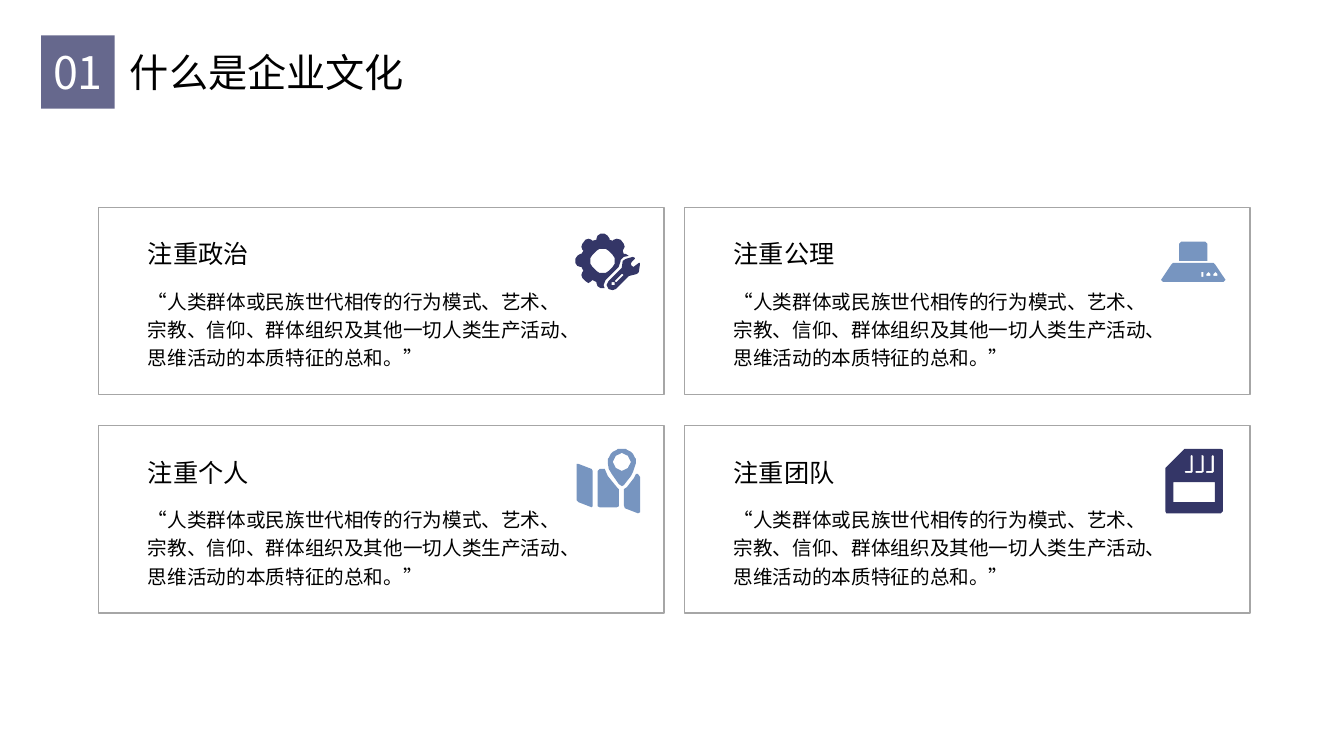
import math

from pptx import Presentation, util as u
from pptx.dml.color import RGBColor
from pptx.enum import shapes, text
from pptx.oxml.ns import qn
from lxml import etree

Cm = u.Cm
FONT = "Noto Sans CJK SC"
COLORS = {"navy": "343667", "blue": "7795C0", "border": "A6A6A6",
          "black": "000000", "white": "FFFFFF"}
QUOTE = ("“人类群体或民族世代相传的行为模式、艺术、宗教、信仰、群体组织"
         "及其他一切人类生产活动、思维活动的本质特征的总和。”")
ICON_UNIT = Cm(0.0254)


def color(name):
    return RGBColor.from_string(COLORS[name])


def arc(cx, cy, radius, start=0, end=360):
    """Points along an arc, in degrees clockwise from the right."""
    steps = 24
    angles = [math.radians(start + (end - start) * i / steps) for i in range(steps + 1)]
    return [(cx + radius * math.cos(a), cy + radius * math.sin(a)) for a in angles]


def rect(left, top, right, bottom):
    return [(left, top), (right, top), (right, bottom), (left, bottom)]


def shift(points, dx):
    return [(x + dx, y) for x, y in points]


GEAR = [
    [(25, 0), (29, 0), (32, 1.5), (34, 5), (34, 6), (37, 7), (38, 6), (41, 5),
     (45, 6), (48, 10), (49, 13), (47, 17), (48, 20), (50, 20), (53, 22), (48, 23),
     (45, 26), (45, 27), (43, 33), (30, 46), (28, 51), (29, 54), (25, 54),
     (22, 52.5), (21, 49), (21, 48), (17, 46), (16, 47), (13, 49), (10, 47),
     (7, 44), (5.5, 41), (7, 38), (8, 37), (6, 33), (5, 33), (1.5, 32), (0, 29),
     (0, 25), (1.5, 21.5), (5, 20), (6, 20), (8, 17), (7, 16), (5.5, 13), (7, 10),
     (10, 6), (13, 5), (16, 6), (17, 7), (21, 6), (21, 5), (22, 1.5)],
    arc(27, 27, 12),
    [(57, 23), (59, 24), (59, 25), (56, 28), (55, 30), (56, 32), (58, 33), (59, 32),
     (63, 29), (64, 29), (64, 31), (63, 38), (61, 40), (53, 42), (40, 55), (37, 56),
     (33, 55), (31, 51), (33, 47), (46, 34), (47, 27), (50, 25)],
    arc(37.5, 49.5, 1.5),
    [(46, 40), (39, 47), (40, 48), (41, 48), (48, 41), (47, 40)],
]
MAP = [
    [(59, 25), (61, 25), (63, 28), (63, 63), (61, 64), (48, 59), (47, 56), (47, 40),
     (50, 38), (57, 29)],
    [(23, 20), (28, 20), (31, 27), (40, 38), (42, 40), (42, 57), (40, 58), (23, 58),
     (21, 57), (21, 22)],
    [(0, 15), (2, 15), (15, 20), (16, 22), (16, 57), (15, 58), (2, 53), (0, 51)],
    arc(45, 14, 14, 180, 360) + [(56, 23), (54, 27), (47, 36), (45, 37), (42, 35),
                                 (35, 25), (32, 20)],
    arc(45, 13, 8.5),
]
HOOD = [
    [(20, 0), (44, 0), (46, 2), (46, 19), (18, 19), (18, 2)],
    [(12, 21), (52, 21), (54, 23), (64, 38), (62, 40), (2, 40), (0, 38), (10, 23)],
    arc(54, 32.5, 2), arc(47, 32.5, 2), rect(40, 30, 42, 35),
]
HOOK = [(20, 22), (25, 22), (25, 7), (26, 6), (27, 7), (27, 23), (26, 24), (20, 24), (19, 23)]
MEMORY_CARD = [
    [(19, 0), (55, 0), (57, 1), (57, 62), (55, 64), (1, 64), (0, 62), (0, 19), (1, 18)],
    *[shift(HOOK, 10.5 * i) for i in range(3)],
    rect(8, 33, 49, 53),
]

# Heading, icon outlines, icon colour, icon offset from the card's corner
CARDS = [
    ("注重政治", GEAR, "navy", (12.01, 0.66)),
    ("注重公理", HOOD, "blue", (12.01, 0.86)),
    ("注重个人", MAP, "blue", (12.04, 0.58)),
    ("注重团队", MEMORY_CARD, "navy", (12.12, 0.58)),
]


def write(shape, content, size, font_color="black", align=text.PP_ALIGN.LEFT,
          anchor=text.MSO_ANCHOR.TOP, spacing=1.0):
    tf = shape.text_frame
    tf.word_wrap = True
    tf.vertical_anchor = anchor
    p = tf.paragraphs[0]
    p.alignment = align
    p.line_spacing = spacing
    r = p.add_run()
    r.text = content
    r.font.size = u.Pt(size)
    r.font.name = FONT
    r.font.color.rgb = color(font_color)
    rPr = r.font._element
    rPr.set("lang", "zh-CN")
    ea = etree.Element(qn("a:ea"), typeface=FONT)
    rPr.find(qn("a:latin")).addnext(ea)


def add_text(s, box, content, size, spacing=1.0):
    tb = s.shapes.add_textbox(*map(Cm, box))
    write(tb, content, size, spacing=spacing)


def add_icon(s, left, top, outlines, fill):
    first, *others = outlines
    builder = s.shapes.build_freeform(*first[0], scale=ICON_UNIT)
    builder.add_line_segments(first[1:])
    for outline in others:
        builder.move_to(*outline[0])
        builder.add_line_segments(outline[1:])
    icon = builder.convert_to_shape(Cm(left), Cm(top))
    icon.shadow.inherit = False
    icon.fill.solid()
    icon.fill.fore_color.rgb = color(fill)
    icon.line.fill.background()


def add_header(s, left, top, side, number, title):
    sp = s.shapes.title
    sp.left, sp.top = Cm(left + side + 0.13), Cm(top + 0.2)
    sp.width, sp.height = Cm(8.2), Cm(1.45)
    write(sp, title, 28)
    sp.text_frame.auto_size = text.MSO_AUTO_SIZE.NONE

    badge = s.shapes.add_shape(shapes.MSO_SHAPE.RECTANGLE, *map(Cm, (left, top, side, side)))
    badge.shadow.inherit = False
    badge.fill.solid()
    badge.fill.fore_color.rgb = color("navy")
    badge.line.fill.background()
    srgb = badge._element.spPr.find(qn("a:solidFill"))[0]
    etree.SubElement(srgb, qn("a:alpha"), val="75000")
    write(badge, number, 32, "white", text.PP_ALIGN.CENTER, text.MSO_ANCHOR.MIDDLE)
    badge.text_frame.word_wrap = False


def add_card(s, left, top, width, height, heading, outlines, fill, icon_offset):
    frame = s.shapes.add_shape(shapes.MSO_SHAPE.RECTANGLE, *map(Cm, (left, top, width, height)))
    frame.shadow.inherit = False
    frame.fill.background()
    frame.line.color.rgb = color("border")
    frame.line.width = u.Pt(1)
    add_icon(s, left + icon_offset[0], top + icon_offset[1], outlines, fill)
    add_text(s, (left + 0.99, top + 1.83, 10.95, 2.41), QUOTE, 14, 1.2)
    add_text(s, (left + 0.99, top + 0.66, 5.69, 1.02), heading, 18)


def main():
    prs = Presentation()
    prs.slide_width, prs.slide_height = Cm(33.87), Cm(19.05)
    s = prs.slides.add_slide(prs.slide_layouts[5])
    add_header(s, 1.04, 0.89, 1.85, "01", "什么是企业文化")
    for i, card in enumerate(CARDS):
        row, col = divmod(i, 2)
        add_card(s, 2.49 + 14.76 * col, 5.23 + 5.5 * row, 14.25, 4.72, *card)
    prs.save("out.pptx")


if __name__ == "__main__":
    main()
